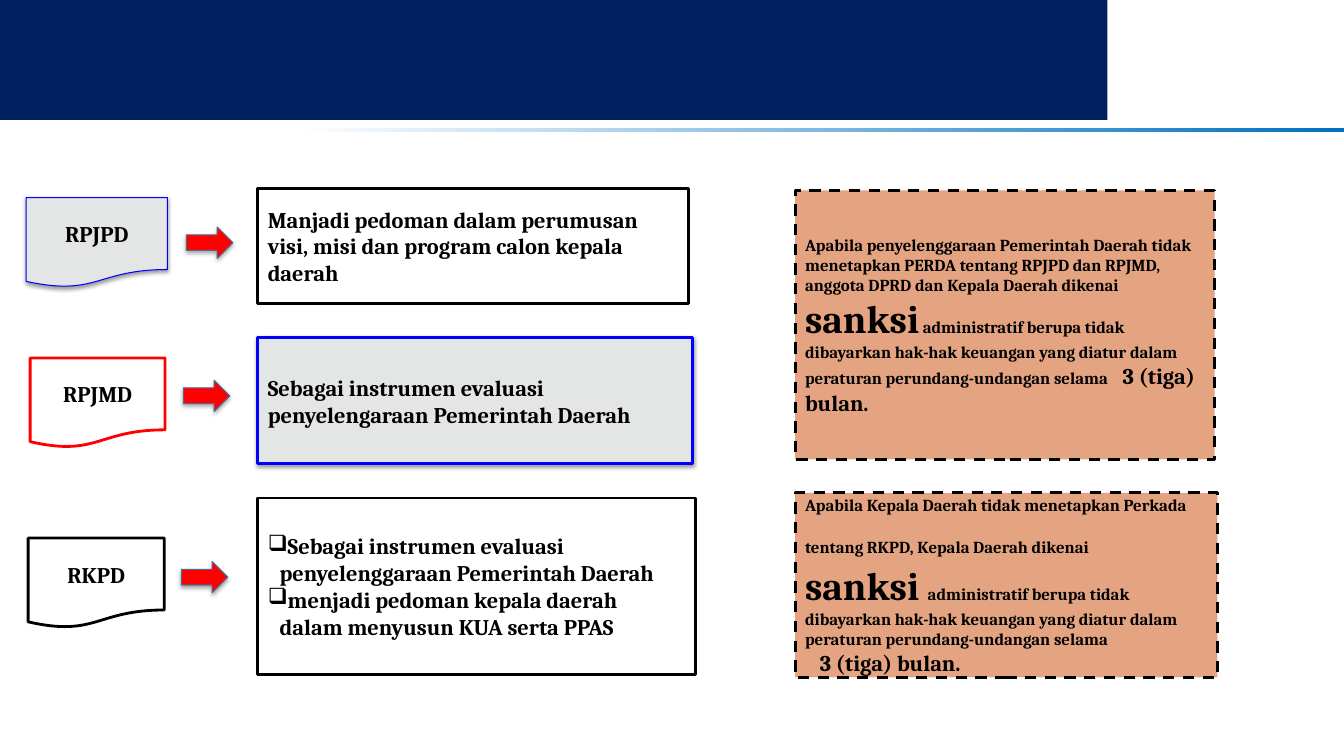
from lxml.etree import SubElement
from pptx import Presentation
from pptx.dml.color import RGBColor
from pptx.enum.dml import MSO_LINE
from pptx.enum.shapes import MSO_SHAPE
from pptx.enum.text import MSO_ANCHOR, PP_ALIGN
from pptx.oxml.ns import qn
from pptx.util import Cm, Pt

FONT = "Cambria"
BLACK, WHITE, GRAY = "000000", "FFFFFF", "E4E5E5"
RED, BLUE, NAVY, SKY = "FF0000", "0000FF", "002060", "0070C0"
RUST, STEEL = "CA4B05", "4D6B92"


def color(code):
    return RGBColor.from_string(code)


def add_shape(slide, kind, place, fill=None, line=None, width=2):
    shape = slide.shapes.add_shape(kind, *[Cm(size) for size in place])
    shape.shadow.inherit = False
    if fill:
        shape.fill.solid()
        shape.fill.fore_color.rgb = color(fill)
    if line:
        shape.line.color.rgb = color(line)
        shape.line.width = Pt(width)
    else:
        shape.line.fill.background()
    return shape


def add_shadow(shape, alpha, dist):
    effects = shape._element.spPr.find(qn("a:effectLst"))
    outer = SubElement(effects, qn("a:outerShdw"), blurRad=str(Pt(3.1)),
                       dist=str(Pt(dist)), dir="5400000", rotWithShape="0")
    tint = SubElement(outer, qn("a:srgbClr"), val=BLACK)
    SubElement(tint, qn("a:alpha"), val=str(alpha * 1000))


def set_indent(para, left, first=0, bullet=None):
    props = para._p.get_or_add_pPr()
    props.set("marL", str(Cm(left)))
    props.set("indent", str(Cm(first)))
    if bullet:
        SubElement(props, qn("a:buChar"), char=bullet)


def set_tab(para, place):
    tabs = SubElement(para._p.get_or_add_pPr(), qn("a:tabLst"))
    SubElement(tabs, qn("a:tab"), pos=str(Cm(place)), algn="l")


def write(shape, paras, align=PP_ALIGN.LEFT):
    """Each paragraph is a list of (text, size) runs."""
    frame = shape.text_frame
    frame.word_wrap = True
    frame.vertical_anchor = MSO_ANCHOR.MIDDLE
    for index, parts in enumerate(paras):
        para = frame.add_paragraph() if index else frame.paragraphs[0]
        para.alignment = align
        for text, size in parts:
            run = para.add_run()
            run.text = text
            run.font.name = FONT
            run.font.size = Pt(size)
            run.font.bold = True
            run.font.color.rgb = color(BLACK)
    return frame.paragraphs


def add_header(slide):
    rule = add_shape(slide, MSO_SHAPE.FLOWCHART_PROCESS, (0, 3.23, 33.87, 0.1))
    rule.fill.gradient()
    rule.fill.gradient_angle = 180
    stops = rule.fill.gradient_stops
    for stop, code, place in zip(stops, (SKY, WHITE), (0, 0.78)):
        stop.color.rgb = color(code)
        stop.position = place
    add_shape(slide, MSO_SHAPE.RECTANGLE, (0, 0, 27.91, 3.02), NAVY)


def add_plan(slide, name, place, fill, line, width):
    shape = add_shape(slide, MSO_SHAPE.FLOWCHART_DOCUMENT, place, fill, line, width)
    write(shape, [[(name, 16)]], PP_ALIGN.CENTER)
    return shape


def add_arrow(slide, left, top):
    arrow = add_shape(slide, MSO_SHAPE.RIGHT_ARROW, (left, top, 1.17, 0.79),
                      RED, STEEL, 0.75)
    add_shadow(arrow, 35, 1.8)


def add_role(slide, place, texts, fill=WHITE, line=BLACK, width=2):
    shape = add_shape(slide, MSO_SHAPE.RECTANGLE, (6.5, *place), fill, line, width)
    paras = write(shape, [[(text, 16)] for text in texts])
    if len(texts) > 1:
        for para in paras:
            set_indent(para, 0.3, -0.3, "❑")
    return shape


def add_sanction(slide, place, paras):
    shape = add_shape(slide, MSO_SHAPE.RECTANGLE, (20.04, *place), RUST, BLACK)
    shape.line.dash_style = MSO_LINE.DASH
    tint = shape._element.spPr.find(qn("a:solidFill"))[0]
    SubElement(tint, qn("a:alpha"), val="50000")
    return write(shape, paras)


def main():
    deck = Presentation()
    deck.slide_width, deck.slide_height = Cm(33.87), Cm(19.05)
    slide = deck.slides.add_slide(deck.slide_layouts[6])
    add_header(slide)

    # Planning documents
    first = add_plan(slide, "RPJPD", (0.66, 4.98, 3.56, 2.26), GRAY, BLUE, 0.75)
    add_shadow(first, 38, 1.6)
    add_plan(slide, "RPJMD", (0.76, 9.02, 3.4, 2.26), WHITE, RED, 2)
    add_plan(slide, "RKPD", (0.71, 13.56, 3.43, 2.26), WHITE, BLACK, 2)
    for left, top in ((4.7, 5.72), (4.62, 9.58), (4.57, 14.15)):
        add_arrow(slide, left, top)

    # Role of each document
    add_role(slide, (4.75, 10.85, 2.9), [
        "Manjadi pedoman dalam perumusan visi, misi dan program calon kepala daerah"])
    middle = add_role(slide, (8.51, 10.95, 3.18), [
        "Sebagai instrumen evaluasi penyelengaraan Pemerintah Daerah"],
        GRAY, BLUE, 2.25)
    add_shadow(middle, 38, 1.6)
    add_role(slide, (12.55, 11.02, 4.45), [
        "Sebagai instrumen evaluasi penyelenggaraan Pemerintah Daerah",
        "menjadi pedoman kepala daerah dalam menyusun KUA serta PPAS"])

    # Sanctions
    rule = ("administratif berupa tidak dibayarkan hak-hak keuangan yang diatur "
            "dalam peraturan perundang-undangan selama")
    term = ("3 (tiga) bulan.", 16)
    paras = add_sanction(slide, (4.8, 10.57, 6.78), [[
        ("Apabila penyelenggaraan Pemerintah Daerah tidak menetapkan PERDA tentang "
         "RPJPD dan RPJMD, anggota DPRD dan Kepala Daerah dikenai ", 12),
        ("sanksi", 28), (f" {rule}\t", 12), term]])
    set_tab(paras[0], 8)
    paras = add_sanction(slide, (12.42, 10.64, 4.65), [[
        ("Apabila Kepala Daerah tidak menetapkan Perkada tentang RKPD, "
         "Kepala Daerah dikenai", 12),
        (" sanksi ", 28), (rule, 12)], [term]])
    set_indent(paras[1], 0.37)

    deck.save("out.pptx")


if __name__ == "__main__":
    main()
